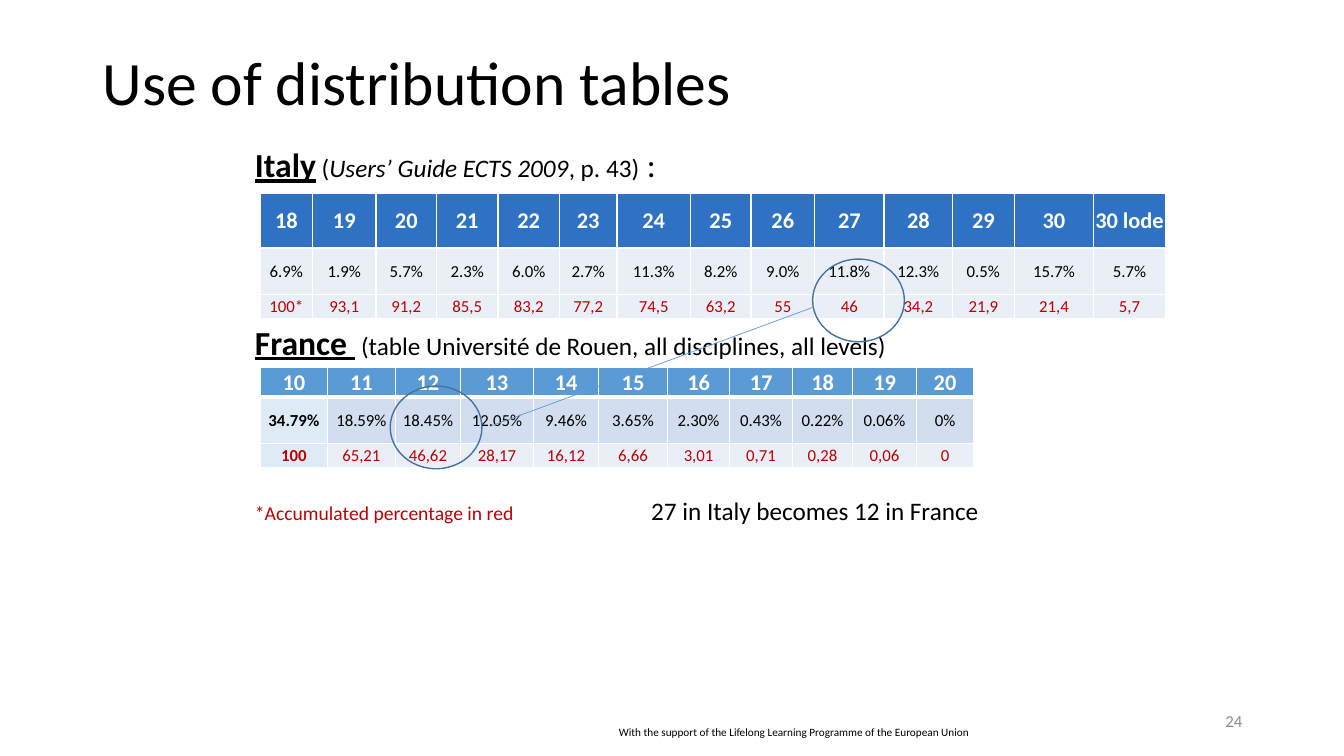
import pptx
import pptx.dml.color
import pptx.enum.shapes
import pptx.enum.text
import pptx.oxml
import pptx.oxml.ns
import pptx.util

PX = 9144
FONT = "Calibri"
C = {
    "black": "000000", "white": "FFFFFF", "red": "C00000", "grey": "8C8C8C",
    "italy": "2F72C3", "france": "5B9BD5", "pale": "EAEFF7", "band": "D2DEEF",
    "first": "DEEBF7", "circle": "43739E",
}
RGB = {name: pptx.dml.color.RGBColor.from_string(code) for name, code in C.items()}
ALIGN = pptx.enum.text.PP_ALIGN
MIDDLE = pptx.enum.text.MSO_ANCHOR.MIDDLE
NS = pptx.oxml.ns.nsdecls("a")


def style(r, size, color="black", bold=False, italic=False, underline=False):
    r.font.name = FONT
    r.font.size = pptx.util.Pt(size)
    r.font.color.rgb = RGB[color]
    r.font.bold = bold
    r.font.italic = italic
    r.font.underline = underline


def add_text(s, left, top, width, height):
    tf = s.shapes.add_textbox(left * PX, top * PX, width * PX, height * PX).text_frame
    tf.word_wrap = True
    return tf


prs = pptx.Presentation()
prs.slide_width = 1333 * PX
prs.slide_height = 750 * PX
s = prs.slides.add_slide(prs.slide_layouts[6])

lines = [
    (0, [("Italy", 24, "black", True, False, True), (" (", 18),
         ("Users’ Guide ECTS 2009", 18, "black", False, True),
         (", p. 43)", 18), (" :", 24)]),
    (98, [("France ", 24, "black", True, False, True), (" ", 20),
          ("(table Université de Rouen, all disciplines, all levels)", 18)]),
    (95, [("*Accumulated percentage in red\t", 14, "red"),
          ("27 in Italy becomes 12 in France", 18)]),
]
tf = add_text(s, 243, 138, 921, 387)
for i, (gap, runs) in enumerate(lines):
    p = tf.add_paragraph() if i else tf.paragraphs[0]
    p.space_before = pptx.util.Pt(gap)
    for text, *look in runs:
        r = p.add_run()
        r.text = text
        style(r, *look)
p._p.get_or_add_pPr().append(pptx.oxml.parse_xml(
    f'<a:tabLst {NS}><a:tab pos="{393 * PX}" algn="l"/></a:tabLst>'))

tf = add_text(s, 604, 715, 370, 24)
tf.text = "With the support of the Lifelong Learning Programme of the European Union"
tf.paragraphs[0].alignment = ALIGN.JUSTIFY
style(tf.paragraphs[0].runs[0], 8)

tables = [
    {"top": 192, "head": "italy", "body": "pale", "first": "pale", "bold": False, "rule": 1,
     "cols": [52, 63, 60, 61, 61, 57, 73, 60, 63, 69, 68, 61, 79, 71],
     "rows": [54, 46, 24],
     "cells": [
         [*map(str, range(18, 31)), "30 lode"],
         ["6.9%", "1.9%", "5.7%", "2.3%", "6.0%", "2.7%", "11.3%", "8.2%", "9.0%",
          "11.8%", "12.3%", "0.5%", "15.7%", "5.7%"],
         ["100*", "93,1", "91,2", "85,5", "83,2", "77,2", "74,5", "63,2", "55",
          "46", "34,2", "21,9", "21,4", "5,7"]]},
    {"top": 364, "head": "france", "body": "band", "first": "first", "bold": True, "rule": 3,
     "cols": [67, 67, 65, 72, 65, 68, 62, 62, 60, 63, 57],
     "rows": [30, 46, 24],
     "cells": [
         [*map(str, range(10, 21))],
         ["34.79%", "18.59%", "18.45%", "12.05%", "9.46%", "3.65%", "2.30%",
          "0.43%", "0.22%", "0.06%", "0%"],
         ["100", "65,21", "46,62", "28,17", "16,12", "6,66", "3,01",
          "0,71", "0,28", "0,06", "0"]]},
]
for t in tables:
    cols, rows = t["cols"], t["rows"]
    tbl = s.shapes.add_table(len(rows), len(cols), 258 * PX, t["top"] * PX,
                             sum(cols) * PX, sum(rows) * PX).table
    tbl.first_row = tbl.horz_banding = False
    for col, width in zip(tbl.columns, cols):
        col.width = width * PX
    for row, height in zip(tbl.rows, rows):
        row.height = height * PX
    fills = [t["head"], t["body"], "pale"]
    for i, values in enumerate(t["cells"]):
        for j, value in enumerate(values):
            cell = tbl.cell(i, j)
            cell.margin_left = cell.margin_top = cell.margin_right = PX
            cell.margin_bottom = 0
            cell.vertical_anchor = MIDDLE
            for side in "LRTB":
                weight = t["rule"] if (i, side) in [(0, "B"), (1, "T")] else 1
                cell._tc.get_or_add_tcPr().append(pptx.oxml.parse_xml(
                    f'<a:ln{side} {NS} w="{weight * 12700}"><a:solidFill>'
                    f'<a:srgbClr val="{C["white"]}"/></a:solidFill></a:ln{side}>'))
            cell.fill.solid()
            cell.fill.fore_color.rgb = RGB[t["first"] if i and j == 0 else fills[i]]
            cell.text_frame.text = value
            p = cell.text_frame.paragraphs[0]
            p.alignment = ALIGN.CENTER
            style(p.runs[0], 12 if i else 16, ["white", "black", "red"][i],
                  i == 0 or (j == 0 and t["bold"]))

for left, top in [(806, 257), (387, 383)]:
    sp = s.shapes.add_shape(pptx.enum.shapes.MSO_SHAPE.OVAL,
                            left * PX, top * PX, 91 * PX, 82 * PX)
    sp.shadow.inherit = False
    sp.fill.background()
    sp.line.color.rgb = RGB["circle"]
    sp.line.width = pptx.util.Pt(1)

link = s.shapes.add_connector(pptx.enum.shapes.MSO_CONNECTOR.STRAIGHT,
                              486 * PX, 423 * PX, 806 * PX, 305 * PX)
link.line.color.rgb = RGB["france"]
link.line.width = pptx.util.Pt(0.5)
link._element.spPr.append(pptx.oxml.parse_xml(f"<a:effectLst {NS}/>"))

tf = add_text(s, 92, 40, 1150, 89)
tf.text = "Use of distribution tables"
tf.vertical_anchor = MIDDLE
tf.paragraphs[0].line_spacing = 0.9
style(tf.paragraphs[0].runs[0], 44)

tf = add_text(s, 942, 695, 300, 40)
tf.text = "24"
tf.vertical_anchor = MIDDLE
tf.paragraphs[0].alignment = ALIGN.RIGHT
style(tf.paragraphs[0].runs[0], 12, "grey")

prs.save("out.pptx")
